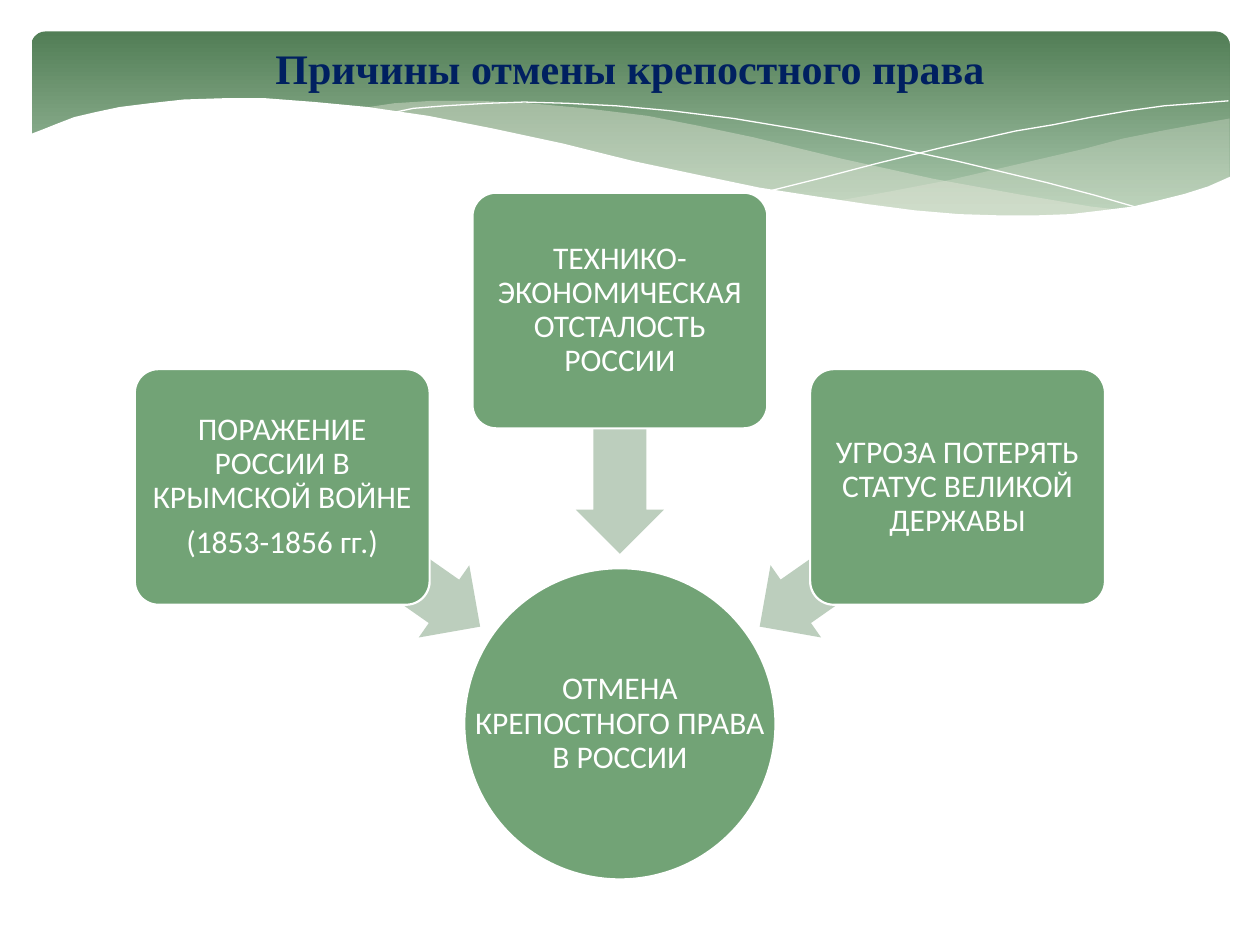
from lxml import etree
from pptx import Presentation
from pptx import util as u
from pptx.dml.color import RGBColor
from pptx.enum import shapes, text
from pptx.oxml.ns import qn

WHITE, GREEN, PALE, CREAM, NAVY = "FFFFFF", "72A376", "BCCEBD", "EAEBDE", "002060"
PRESET = shapes.MSO_SHAPE


def paint(shape, fill=None, line=None, width=0, opacity=None):
    """Set fill and outline from hex strings; None means no fill or no line."""
    shape.shadow.inherit = False
    for part, colour in ((shape.fill, fill), (shape.line.fill, line)):
        if colour is None:
            part.background()
        else:
            part.solid()
            part.fore_color.rgb = RGBColor.from_string(colour)
    if line:
        shape.line.width = u.Pt(width)
    if opacity:
        tint = shape.fill._xPr.find(".//" + qn("a:srgbClr"))
        etree.SubElement(tint, qn("a:alpha")).set("val", str(opacity * 1000))


def write(frame, paragraphs, inset, **font):
    """Fill a text frame with centred, vertically centred paragraphs."""
    frame.word_wrap = True
    frame.vertical_anchor = text.MSO_ANCHOR.MIDDLE
    for side in ("left", "right", "top", "bottom"):
        setattr(frame, "margin_" + side, u.Inches(inset))
    frame.text = "\n".join(paragraphs)
    for paragraph in frame.paragraphs:
        paragraph.alignment = text.PP_ALIGN.CENTER
        paragraph.font.color.rgb = RGBColor.from_string(font["colour"])
        for key in ("name", "bold"):
            setattr(paragraph.font, key, font[key])
        paragraph.font.size = u.Pt(font["size"])


prs = Presentation()
prs.slide_width, prs.slide_height = u.Inches(10), u.Inches(7.5)
slide = prs.slides.add_slide(prs.slide_layouts[5])
canvas = slide.shapes

# Gradient header panel
header = canvas.add_shape(PRESET.ROUNDED_RECTANGLE,
                          *map(u.Inches, (0.25, 0.25, 9.51, 1.56)))
header.adjustments[0] = 0.07
paint(header)
header.fill.gradient()
header.fill.gradient_angle = 270
for stop, position, colour in zip(header.fill.gradient_stops, (0, 0.9), ("527E56", "AAC8AD")):
    stop.position = position
    stop.color.rgb = RGBColor.from_string(colour)

# Header waves: points in hundredths of an inch, closed flag, format
waves = [
    ([(976, 94), (948, 99), (921, 104), (891, 110), (861, 118), (805, 131), (753, 143),
      (706, 152), (661, 160), (691, 164), (719, 167), (745, 169), (769, 171), (792, 172),
      (835, 172), (872, 169), (897, 165), (921, 160), (942, 154), (963, 147), (976, 141)],
     True, dict(fill=CREAM, opacity=29)),
    ([(893, 167), (866, 164), (807, 154), (741, 142), (668, 126), (598, 109), (555, 100),
      (514, 92), (465, 86), (420, 82), (380, 80), (344, 80), (313, 82), (286, 86),
      (323, 90), (362, 97), (404, 106), (449, 116), (530, 135), (584, 146), (634, 156),
      (680, 163), (722, 168), (761, 171), (796, 173), (838, 172), (867, 170)],
     True, dict(fill=CREAM, opacity=40)),
    ([(309, 90), (328, 86), (353, 84), (387, 82), (416, 81), (450, 82), (489, 84),
      (533, 88), (582, 94), (636, 103), (695, 114), (760, 128), (831, 145), (869, 155),
      (907, 166)],
     False, dict(line=WHITE)),
    ([(613, 151), (653, 141), (695, 130), (748, 117), (806, 104), (836, 99), (866, 93),
      (895, 88), (924, 84), (951, 82), (975, 80)],
     False, dict(line=WHITE)),
    ([(977, 140), (959, 148), (940, 154), (920, 159), (899, 164), (875, 167), (850, 170),
      (823, 171), (793, 171), (761, 170), (726, 167), (688, 162), (648, 156), (603, 149),
      (555, 139), (503, 128), (447, 114), (391, 102), (340, 92), (292, 85), (250, 81),
      (211, 78), (177, 78), (146, 79), (119, 82), (95, 85), (76, 89), (59, 93), (46, 98),
      (36, 102), (23, 107), (23, 224), (977, 224)],
     True, dict(fill=WHITE)),
]
for points, closed, look in waves:
    builder = canvas.build_freeform(*points[0], scale=u.Inches(0.01))
    builder.add_line_segments(points[1:], close=closed)
    paint(builder.convert_to_shape(), **look)

# Diagram grid
CENTRE = 4.92
BOX_W, BOX_H, COLUMN = 2.34, 1.87, 2.68
ARROW_W, ARROW_H, ARROW_STEP = 1.93, 0.7, 1.9
CIRCLE = 2.47
body = dict(name="Calibri", size=18, bold=False, colour=WHITE)

# Result circle; its label spans the full diameter
circle_area = [u.Inches(v) for v in (CENTRE - CIRCLE / 2, 4.51, CIRCLE, CIRCLE)]
result = canvas.add_shape(PRESET.OVAL, *circle_area)
paint(result, GREEN, WHITE, 1.25)
labels = [(canvas.add_textbox(*circle_area).text_frame,
           ["ОТМЕНА КРЕПОСТНОГО ПРАВА В РОССИИ"], 0.01)]

# Causes, each with an arrow to the result: column, box top, arrow top, rotation, wording
causes = [
    (-1, 2.93, 4.07, 215, ["ПОРАЖЕНИЕ РОССИИ В КРЫМСКОЙ ВОЙНЕ", "(1853-1856 гг.)"]),
    (0, 1.53, 3.08, 270, ["ТЕХНИКО-ЭКОНОМИЧЕСКАЯ ОТСТАЛОСТЬ РОССИИ"]),
    (1, 2.93, 4.07, 325, ["УГРОЗА ПОТЕРЯТЬ СТАТУС ВЕЛИКОЙ ДЕРЖАВЫ"]),
]
for column, box_top, arrow_top, rotation, wording in causes:
    arrow_left = CENTRE + column * ARROW_STEP - ARROW_W / 2
    arrow = canvas.add_shape(PRESET.LEFT_ARROW, *map(
        u.Inches, (arrow_left, arrow_top, ARROW_W, ARROW_H)))
    arrow.rotation = rotation
    arrow.adjustments[0], arrow.adjustments[1] = 0.6, 0.5
    paint(arrow, PALE)

    box_left = CENTRE + column * COLUMN - BOX_W / 2
    cause = canvas.add_shape(PRESET.ROUNDED_RECTANGLE, *map(
        u.Inches, (box_left, box_top, BOX_W, BOX_H)))
    cause.adjustments[0] = 0.1
    paint(cause, GREEN, WHITE, 1.25)
    labels.append((cause.text_frame, wording, 0))

for frame, wording, inset in labels:
    write(frame, wording, inset, **body)
    for paragraph in frame.paragraphs:
        paragraph.line_spacing = 0.9
        paragraph.space_after = u.Pt(6.3)

# Title, brought in front of the header
title = canvas.title
title.left, title.top, title.width, title.height = map(u.Inches, (0, 0.29, 10, 0.5))
write(title.text_frame, ["Причины отмены крепостного права"], 0.05,
      name="Times New Roman", size=24, bold=True, colour=NAVY)
canvas._spTree.append(title._element)

prs.save("out.pptx")
